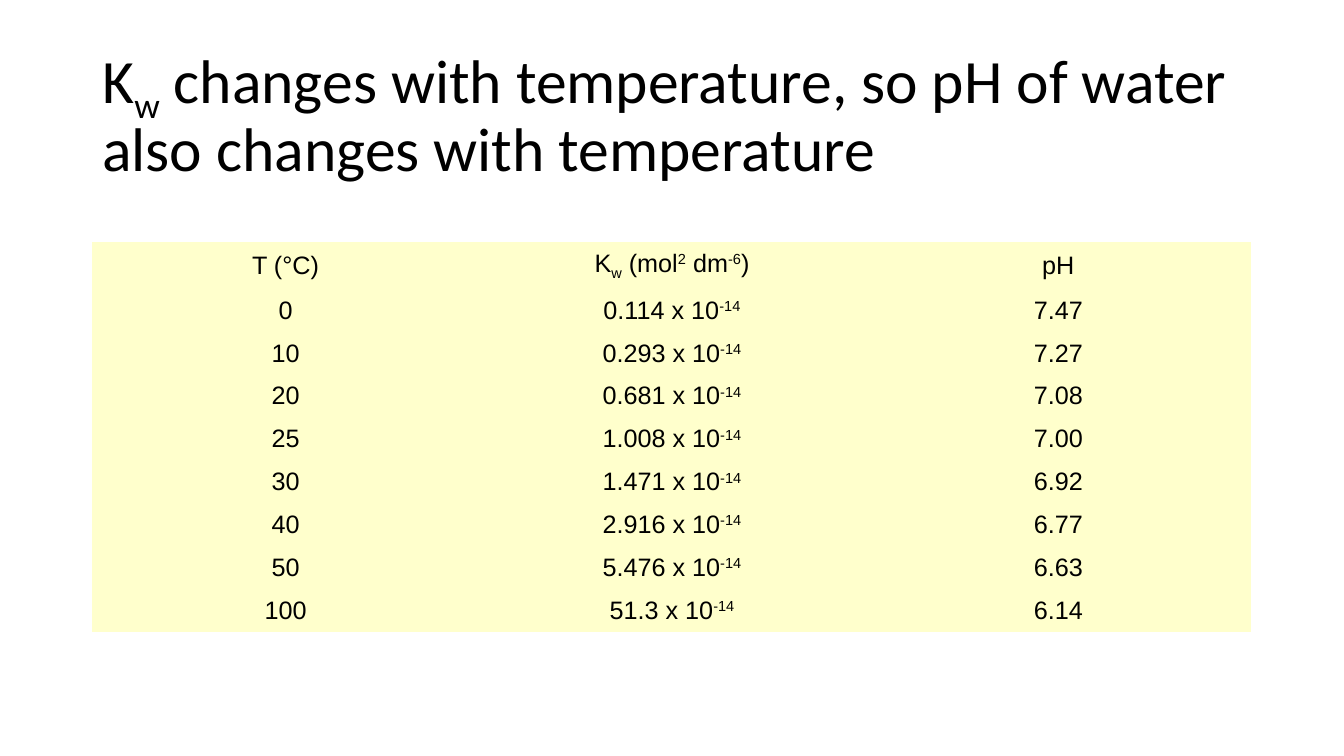
from dataclasses import dataclass

from pptx import Presentation
from pptx import util as u
from pptx.dml.color import RGBColor
from pptx.enum import text

PX = 6350  # EMU in one px, slide is 1920 x 1080 px


@dataclass(frozen=True)
class Theme:
    ink: RGBColor = RGBColor(0, 0, 0)
    cream: RGBColor = RGBColor(0xFF, 0xFF, 0xCC)
    head: str = "Calibri"
    body: str = "Arial"
    big: int = 44
    small: int = 18


THEME = Theme()
SHIFTS = {"_": -25000, "^": 30000}
PLAIN = "{2D5ABB26-0587-4C30-8999-92F81FD0307C}"  # no style, no grid

TITLE = ("K~_w~ changes with temperature, so pH of water "
         "also changes with temperature")
HEADS = ("T (°C)", "K~_w~ (mol~^2~ dm~^-6~)", "pH")
DATA = (
    (0, "0.114", "7.47"),
    (10, "0.293", "7.27"),
    (20, "0.681", "7.08"),
    (25, "1.008", "7.00"),
    (30, "1.471", "6.92"),
    (40, "2.916", "6.77"),
    (50, "5.476", "6.63"),
    (100, "51.3", "6.14"),
)


def box(*sides):
    return [u.Emu(side * PX) for side in sides]


def write(para, words, face, size):
    """Split words at ~; a part led by _ is lowered, by ^ is raised."""
    font = para.font
    font.name, font.size = face, u.Pt(size)
    font.color.rgb = THEME.ink
    for part in words.split("~"):
        if not part:
            continue
        run = para.add_run()
        shift = SHIFTS.get(part[0])
        run.text = part[1:] if shift else part
        if shift:
            run.font._element.set("baseline", str(shift))


def add_title(slide, words, *sides):
    frame = slide.shapes.add_textbox(*box(*sides)).text_frame
    frame.word_wrap = True
    frame.vertical_anchor = text.MSO_ANCHOR.MIDDLE
    para = frame.paragraphs[0]
    para.line_spacing = 0.9
    write(para, words, THEME.head, THEME.big)


def fill_cell(cell, words):
    cell.fill.solid()
    cell.fill.fore_color.rgb = THEME.cream
    cell.vertical_anchor = text.MSO_ANCHOR.MIDDLE
    inset = u.Emu(9 * PX)
    cell.margin_left = cell.margin_right = inset
    cell.margin_top = cell.margin_bottom = inset
    para = cell.text_frame.paragraphs[0]
    para.alignment = text.PP_ALIGN.CENTER
    write(para, words, THEME.body, THEME.small)


def add_grid(slide, rows, left, top, width, first, rest):
    high = first + rest * (len(rows) - 1)
    grid = slide.shapes.add_table(
        len(rows), len(rows[0]), *box(left, top, width, high)).table
    grid.first_row = grid.horz_banding = False
    grid._tbl.tblPr[0].text = PLAIN
    for i, row in enumerate(rows):
        grid.rows[i].height = u.Emu((rest if i else first) * PX)
        for j, words in enumerate(row):
            fill_cell(grid.cell(i, j), words)


def main():
    deck = Presentation()
    deck.slide_width, deck.slide_height = box(1920, 1080)
    slide = deck.slides.add_slide(deck.slide_layouts[6])

    # Heading
    add_title(slide, TITLE, 132, 58, 1656, 209)

    # Ion product and pH by temperature
    rows = [HEADS] + [(str(t), f"{kw} x 10~^-14", ph) for t, kw, ph in DATA]
    add_grid(slide, rows, 132, 346, 1656, 67, 60)

    deck.save("out.pptx")


if __name__ == "__main__":
    main()
